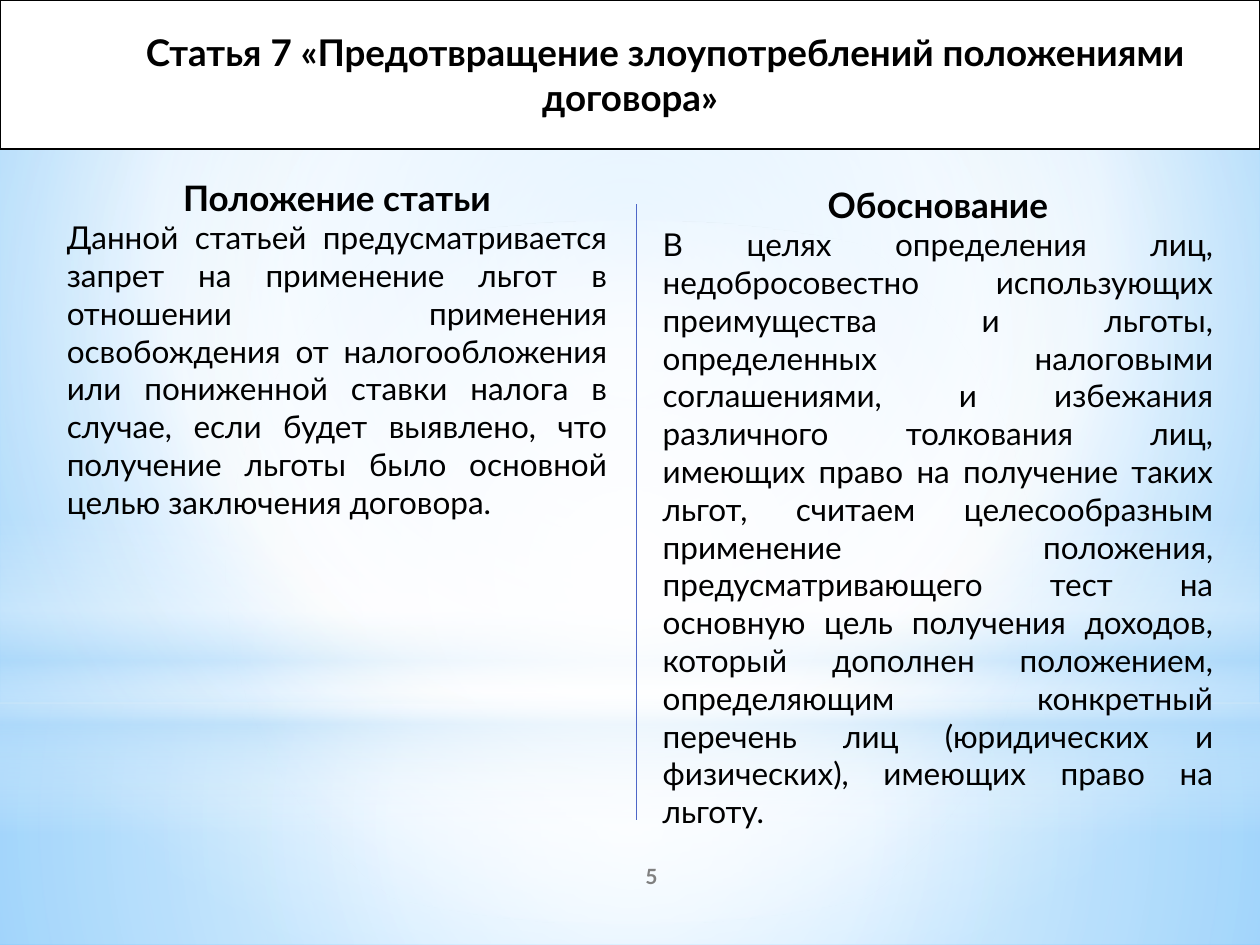
import pptx
import pptx.util
import pptx.dml.color
import pptx.enum.text
import pptx.enum.shapes
import pptx.oxml
import pptx.oxml.ns
import lxml.etree

Inches = pptx.util.Inches
Pt = pptx.util.Pt
ALIGN = pptx.enum.text.PP_ALIGN
FORM = pptx.enum.shapes.MSO_SHAPE
qn = pptx.oxml.ns.qn

FONT = "Lato"
HUES = {"ink": "000000", "paper": "FFFFFF", "rule": "4E67C8", "page": "808080",
        "sky": "B4DCFA", "rim": "9ED5FF", "deep": "5BB9FF"}
MID = (50, 50, 50, 50)

GLOWS = [
    (FORM.RECTANGLE, (0, 5.58, 10, 1.92),
     [(0, "paper", 91), (37, "paper", 76), (100, "sky", 79)], MID),
    (FORM.RECTANGLE, (0, 0, 10, 5.58),
     [(0, "paper", 89), (48, "paper", 62), (100, "sky", 79)], MID),
    (FORM.RECTANGLE, (0, 4.12, 10, 2.5),
     [(0, "paper", 0), (29, "paper", 30), (45, "sky", 40),
      (55, "paper", 26), (65, "sky", 60), (100, "paper", 0)], None),
    (FORM.OVAL, (0, 1.75, 10, 5.58),
     [(0, "paper", 100), (56, "paper", 0)], MID),
]

TITLE = "Статья 7 «Предотвращение злоупотреблений положениями договора»"
PARTS = [
    ((0.43, 1.23, 4.49, 3.07), "Положение статьи",
     "Данной статьей предусматривается запрет на применение льгот в отношении "
     "применения освобождения от налогообложения или пониженной ставки налога в "
     "случае, если будет выявлено, что получение льготы было основной целью "
     "заключения договора."),
    ((5.16, 1.39, 4.57, 5.26), "Обоснование",
     "В целях определения лиц, недобросовестно использующих преимущества и льготы, "
     "определенных налоговыми соглашениями, и избежания различного толкования лиц, "
     "имеющих право на получение таких льгот, считаем целесообразным применение "
     "положения, предусматривающего тест на основную цель получения доходов, "
     "который дополнен положением, определяющим конкретный перечень лиц "
     "(юридических и физических), имеющих право на льготу."),
]


def tint(name):
    return pptx.dml.color.RGBColor.from_string(HUES[name])


def blend(root, stops, focus):
    grad = pptx.oxml.parse_xml(
        '<a:gradFill %s rotWithShape="1"><a:gsLst/></a:gradFill>'
        % pptx.oxml.ns.nsdecls("a"))
    for spot, hue, alpha in stops:
        stop = lxml.etree.SubElement(grad[0], qn("a:gs"), pos=str(spot * 1000))
        color = lxml.etree.SubElement(stop, qn("a:srgbClr"), val=HUES[hue])
        if alpha < 100:
            lxml.etree.SubElement(color, qn("a:alpha"), val=str(alpha * 1000))
    if focus:
        way = lxml.etree.SubElement(grad, qn("a:path"), path="circle")
        sides = {side: str(part * 1000) for side, part in zip("ltrb", focus)}
        lxml.etree.SubElement(way, qn("a:fillToRect"), **sides)
    else:
        lxml.etree.SubElement(grad, qn("a:lin"), ang="5400000", scaled="0")
    solid = root.find(".//" + qn("a:solidFill"))
    solid.getparent().replace(solid, grad)


def glow(slide, form, box, stops, focus):
    shape = slide.shapes.add_shape(form, *map(Inches, box))
    shape.shadow.inherit = False
    shape.line.fill.background()
    shape.fill.solid()
    blend(shape.element, stops, focus)


def place(shape, box):
    shape.left, shape.top, shape.width, shape.height = map(Inches, box)
    shape.element.getparent().append(shape.element)


def frame(shape):
    text = shape.text_frame
    text.word_wrap = True
    text.auto_size = pptx.enum.text.MSO_AUTO_SIZE.NONE
    text.vertical_anchor = pptx.enum.text.MSO_ANCHOR.MIDDLE
    return text


def write(para, words, size, bold=True, align=ALIGN.CENTER, hue="ink", indent=0):
    para.alignment = align
    para.space_before = Pt(0)
    props = para._p.get_or_add_pPr()
    props.set("marL", "0")
    props.set("indent", str(Inches(indent)))
    lxml.etree.SubElement(props, qn("a:buNone"))
    run = para.add_run()
    run.text = words
    run.font.name = FONT
    run.font.size = Pt(size)
    run.font.bold = bold
    run.font.color.rgb = tint(hue)


def head(slide):
    shape = slide.shapes.title
    place(shape, (0, 0, 10, 1.18))
    shape.fill.solid()
    shape.fill.fore_color.rgb = tint("paper")
    shape.line.color.rgb = tint("ink")
    shape.line.width = Pt(1.25)
    write(frame(shape).paragraphs[0], TITLE, 21, indent=0.56)


def column(shape, box, label, words):
    place(shape, box)
    text = frame(shape)
    write(text.paragraphs[0], label, 20)
    write(text.add_paragraph(), words, 18, False, ALIGN.JUSTIFY)


def rule(slide):
    line = slide.shapes.add_connector(
        pptx.enum.shapes.MSO_CONNECTOR.STRAIGHT,
        Inches(5.05), Inches(1.62), Inches(5.05), Inches(6.51))
    line.line.color.rgb = tint("rule")
    line.line.width = Pt(0.75)
    lxml.etree.SubElement(line.element.spPr, qn("a:effectLst"))


def number(slide):
    shape = slide.shapes.add_textbox(*map(Inches, (4.17, 6.75, 2, 0.4)))
    write(frame(shape).paragraphs[0], "5", 12, hue="page")


def main():
    deck = pptx.Presentation()
    deck.slide_width, deck.slide_height = Inches(10), Inches(7.5)
    slide = deck.slides.add_slide(deck.slide_layouts[3])
    slide.background.fill.solid()
    blend(slide.element, [(0, "rim", 100), (60, "paper", 100), (100, "deep", 100)],
          (20, 10, 20, 60))
    for item in GLOWS:
        glow(slide, *item)
    bodies = [slide.placeholders[1], slide.placeholders[2]]
    head(slide)
    for body, part in zip(bodies, PARTS):
        column(body, *part)
    rule(slide)
    number(slide)
    deck.save("out.pptx")


if __name__ == "__main__":
    main()
